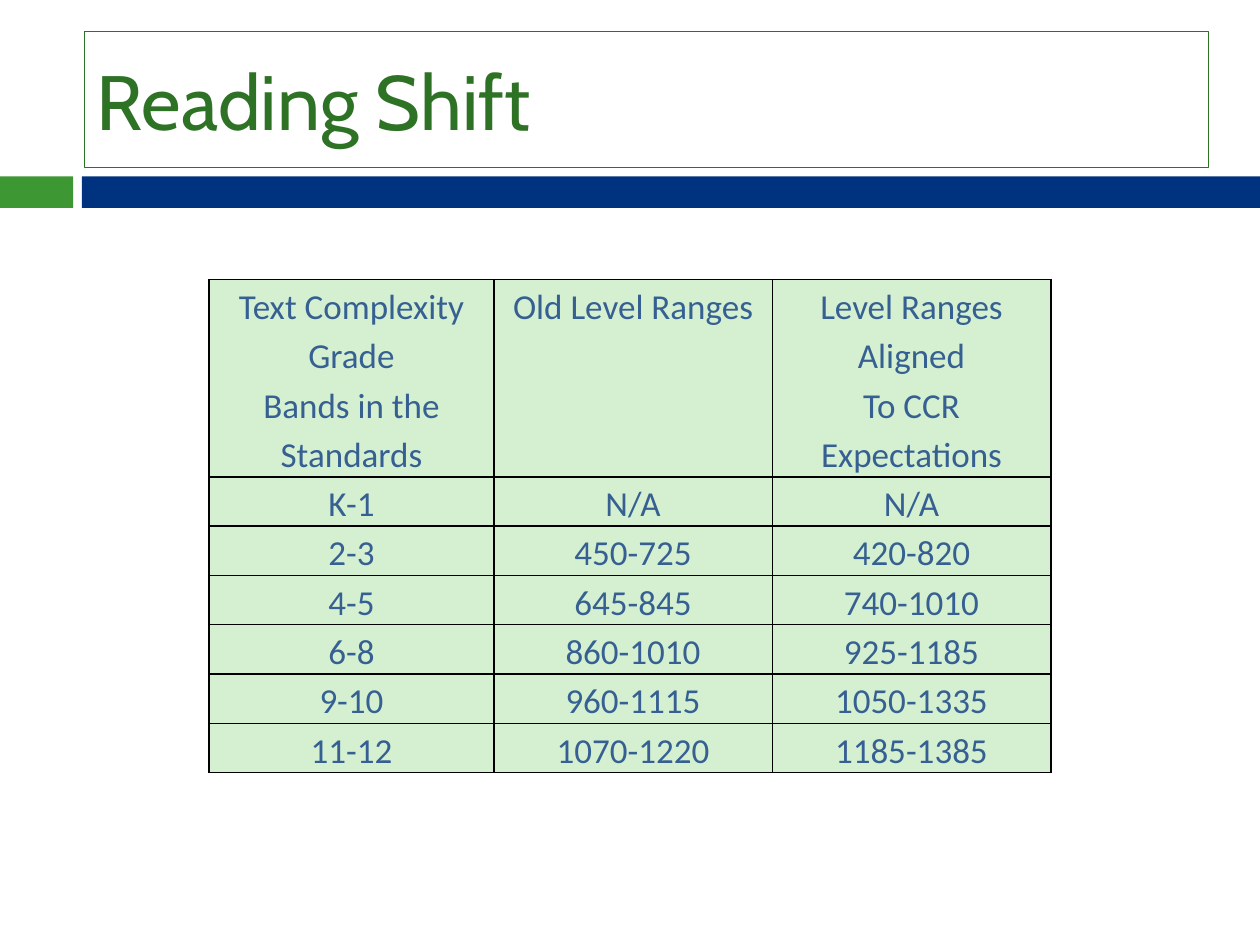
from lxml import etree
from pptx import Presentation
from pptx.dml.color import RGBColor
from pptx.enum.shapes import MSO_SHAPE
from pptx.enum.text import MSO_ANCHOR, PP_ALIGN
from pptx.oxml.ns import qn
from pptx.util import Inches, Pt

RECT = MSO_SHAPE.RECTANGLE
MIDDLE = MSO_ANCHOR.MIDDLE
LEFT, CENTER = PP_ALIGN.LEFT, PP_ALIGN.CENTER

WIDTH, HEIGHT = 10, 7.5
BAND_TOP, BAND_HEIGHT = 1.4, 0.25
COLUMNS = [2.26, 2.21, 2.21]
ROW_HEIGHT = 0.38
HEADER_HEIGHT = 4 * ROW_HEIGHT + 0.01
TITLE_FONT = {"name": "Cabin", "size": Pt(44)}
CELL_FONT = {"name": "Calibri", "size": Pt(20)}
CELL_MARGINS = {"margin_left": Inches(0.07), "margin_right": Inches(0.07),
                "margin_top": 0, "margin_bottom": 0}
ROWS = [
    ["Text Complexity Grade\nBands in the Standards", "Old Level Ranges",
     "Level Ranges Aligned\nTo CCR Expectations"],
    ["K-1", "N/A", "N/A"],
    ["2-3", "450-725", "420-820"],
    ["4-5", "645-845", "740-1010"],
    ["6-8", "860-1010", "925-1185"],
    ["9-10", "960-1115", "1050-1335"],
    ["11-12", "1070-1220", "1185-1385"],
]


def rgb(value):
    """Turn a hex string into a colour."""
    return RGBColor.from_string(value)


def set_all(target, values):
    """Set each attribute of target from a dict."""
    for name, value in values.items():
        setattr(target, name, value)


def write(tf, text, font, color, **paragraph):
    """Write text into a frame, one paragraph per line."""
    tf.text = text
    for p in tf.paragraphs:
        set_all(p, paragraph)
        for r in p.runs:
            set_all(r.font, font)
            r.font.color.rgb = rgb(color)


def add_rect(s, left, top, width, height, fill=None, line=None):
    """Add a plain rectangle, filled or outlined."""
    sp = s.shapes.add_shape(RECT, *map(Inches, (left, top, width, height)))
    sp.shadow.inherit = False
    if fill:
        sp.fill.solid()
        sp.fill.fore_color.rgb = rgb(fill)
    else:
        sp.fill.background()
    if line:
        sp.line.color.rgb = rgb(line)
        sp.line.width = Pt(0.75)
    else:
        sp.line.fill.background()
    return sp


def add_title(s, text):
    """Add the outlined title box."""
    sp = add_rect(s, 0.67, 0.25, 8.92, 1.08, line="2E7226")
    tf = sp.text_frame
    set_all(tf, {"word_wrap": True, "vertical_anchor": MIDDLE})
    write(tf, text, TITLE_FONT, "2E7226", alignment=LEFT)


def add_borders(cell, color, width):
    """Draw a solid line on the four sides of a cell."""
    tc_pr = cell._tc.get_or_add_tcPr()
    for side in ("a:lnL", "a:lnR", "a:lnT", "a:lnB"):
        ln = etree.SubElement(tc_pr, qn(side), w=str(Pt(width)))
        fill = etree.SubElement(ln, qn("a:solidFill"))
        etree.SubElement(fill, qn("a:srgbClr"), val=color)


def format_cell(cell, text):
    """Give a cell its text, borders and fill."""
    set_all(cell, CELL_MARGINS)
    add_borders(cell, "000000", 1)
    cell.fill.solid()
    cell.fill.fore_color.rgb = rgb("D4F0D1")
    write(cell.text_frame, text, CELL_FONT, "376092",
          alignment=CENTER, line_spacing=1.15)


def add_range_table(s):
    """Add the table of level ranges, centred across the slide."""
    heights = [HEADER_HEIGHT] + [ROW_HEIGHT] * (len(ROWS) - 1)
    width = sum(COLUMNS)
    frame = s.shapes.add_table(
        len(ROWS), len(COLUMNS), Inches((WIDTH - width) / 2), Inches(2.22),
        Inches(width), Inches(sum(heights)))
    table = frame.table
    for column, size in zip(table.columns, COLUMNS):
        column.width = Inches(size)
    for row, size, texts in zip(table.rows, heights, ROWS):
        row.height = Inches(size)
        for cell, text in zip(row.cells, texts):
            format_cell(cell, text)


def main():
    """Build the slide and save it."""
    prs = Presentation()
    prs.slide_width, prs.slide_height = Inches(WIDTH), Inches(HEIGHT)
    s = prs.slides.add_slide(prs.slide_layouts[6])
    add_rect(s, 0, BAND_TOP, 0.58, BAND_HEIGHT, fill="3D9833")
    add_rect(s, 0.65, BAND_TOP, WIDTH - 0.65, BAND_HEIGHT, fill="00337F")
    add_title(s, "Reading Shift")
    add_range_table(s)
    prs.save("out.pptx")


if __name__ == "__main__":
    main()
